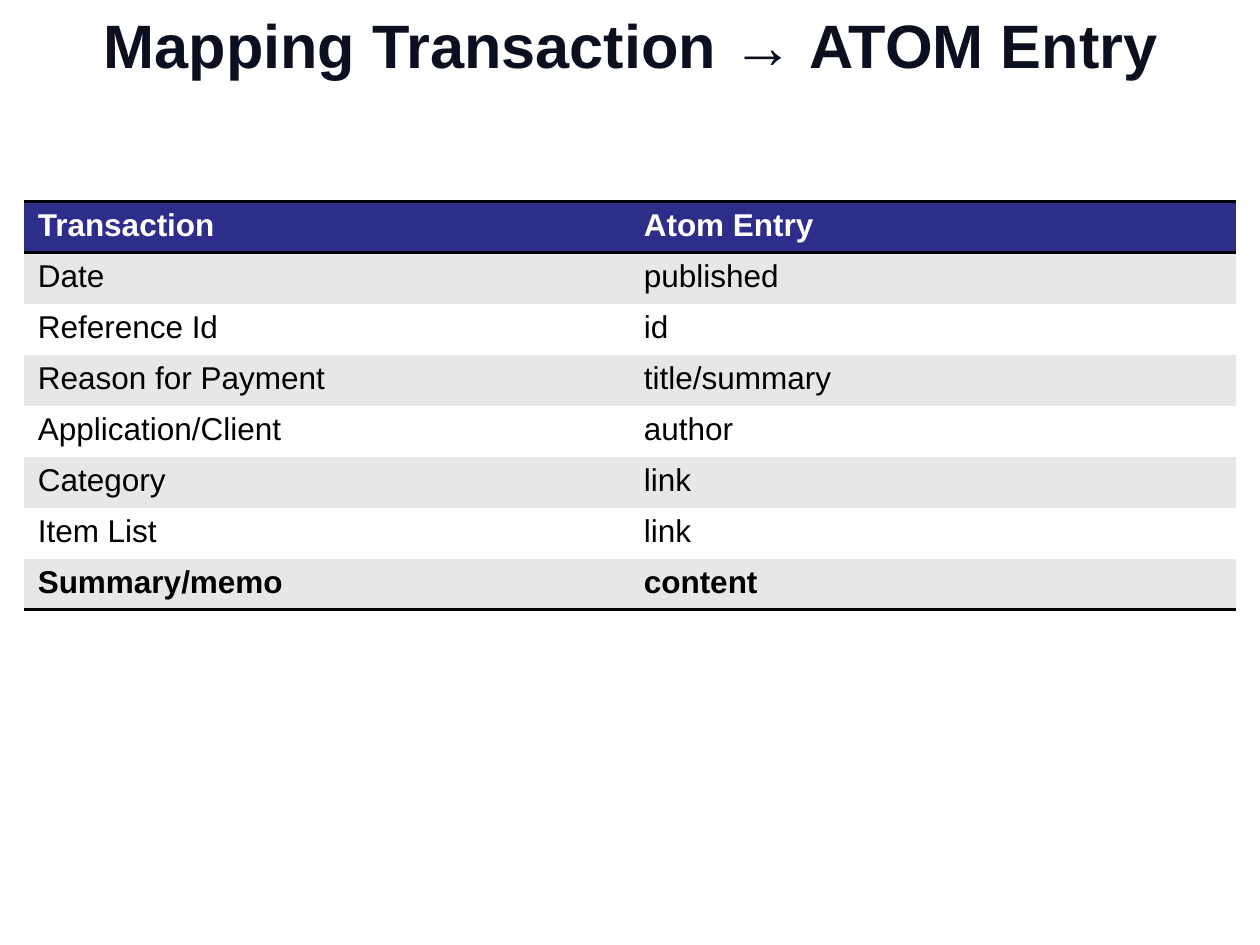
from typing import NamedTuple

from lxml.etree import SubElement
from pptx import Presentation
from pptx.dml.color import RGBColor
from pptx.enum.text import MSO_ANCHOR, PP_ALIGN
from pptx.oxml.ns import qn
from pptx.slide import Slide
from pptx.table import _Cell
from pptx.util import Inches, Pt

FONT = "Arial"
TITLE_COLOR = RGBColor(0x0C, 0x0F, 0x20)
HEADER_FILL = RGBColor(0x2D, 0x2D, 0x8A)
BAND_FILL = RGBColor(0xE7, 0xE7, 0xE7)
WHITE = RGBColor(0xFF, 0xFF, 0xFF)
BLACK = RGBColor(0x00, 0x00, 0x00)
NO_GRID_STYLE = "{2D5ABB26-0587-4C30-8999-92F81FD0307C}"


class Mapping(NamedTuple):
    transaction: str
    atom_entry: str


MAPPINGS = [
    Mapping("Transaction", "Atom Entry"),
    Mapping("Date", "published"),
    Mapping("Reference Id", "id"),
    Mapping("Reason for Payment", "title/summary"),
    Mapping("Application/Client", "author"),
    Mapping("Category", "link"),
    Mapping("Item List", "link"),
    Mapping("Summary/memo", "content"),
]


def add_title(slide: Slide, text: str) -> None:
    title = slide.shapes.title
    title.left, title.top = Inches(0.2), Inches(0)
    title.width, title.height = Inches(9.62), Inches(0.7)
    frame = title.text_frame
    frame.text = text
    frame.word_wrap = True
    frame.vertical_anchor = MSO_ANCHOR.MIDDLE
    frame.margin_left = frame.margin_right = Inches(0.04)
    frame.margin_top = frame.margin_bottom = Inches(0.04)
    paragraph = frame.paragraphs[0]
    paragraph.alignment = PP_ALIGN.CENTER
    paragraph.font.name = FONT
    paragraph.font.size = Pt(35)
    paragraph.font.bold = True
    paragraph.font.color.rgb = TITLE_COLOR


def add_border(cell: _Cell, side: str) -> None:
    properties = cell._tc.get_or_add_tcPr()
    line = SubElement(properties, qn(f"a:{side}"), w=str(Pt(2)))
    fill = SubElement(line, qn("a:solidFill"))
    SubElement(fill, qn("a:srgbClr"), val=str(BLACK))


def format_cell(cell: _Cell, text: str, row: int) -> None:
    is_header = row == 0
    is_last = row == len(MAPPINGS) - 1
    if is_header:
        add_border(cell, "lnT")
    if is_header or is_last:
        add_border(cell, "lnB")
    cell.fill.solid()
    band = BAND_FILL if row % 2 else WHITE
    cell.fill.fore_color.rgb = HEADER_FILL if is_header else band
    cell.margin_left = cell.margin_right = Inches(0.11)
    cell.margin_top = cell.margin_bottom = Inches(0.05)
    cell.text = text
    font = cell.text_frame.paragraphs[0].font
    font.name = FONT
    font.size = Pt(18)
    font.bold = is_header or is_last
    font.color.rgb = WHITE if is_header else BLACK


def add_mapping_table(slide: Slide) -> None:
    table = slide.shapes.add_table(
        len(MAPPINGS), 2, Inches(0.19), Inches(1.6), Inches(9.62), Inches(3.24)
    ).table
    table._tbl.tblPr.find(qn("a:tableStyleId")).text = NO_GRID_STYLE
    table.last_row = True
    for row, mapping in enumerate(MAPPINGS):
        for column, text in enumerate(mapping):
            format_cell(table.cell(row, column), text, row)


def main() -> None:
    presentation = Presentation()
    presentation.slide_width = Inches(10)
    presentation.slide_height = Inches(7.5)
    slide = presentation.slides.add_slide(presentation.slide_layouts[5])
    add_title(slide, "Mapping Transaction → ATOM Entry")
    add_mapping_table(slide)
    presentation.save("out.pptx")


if __name__ == "__main__":
    main()
